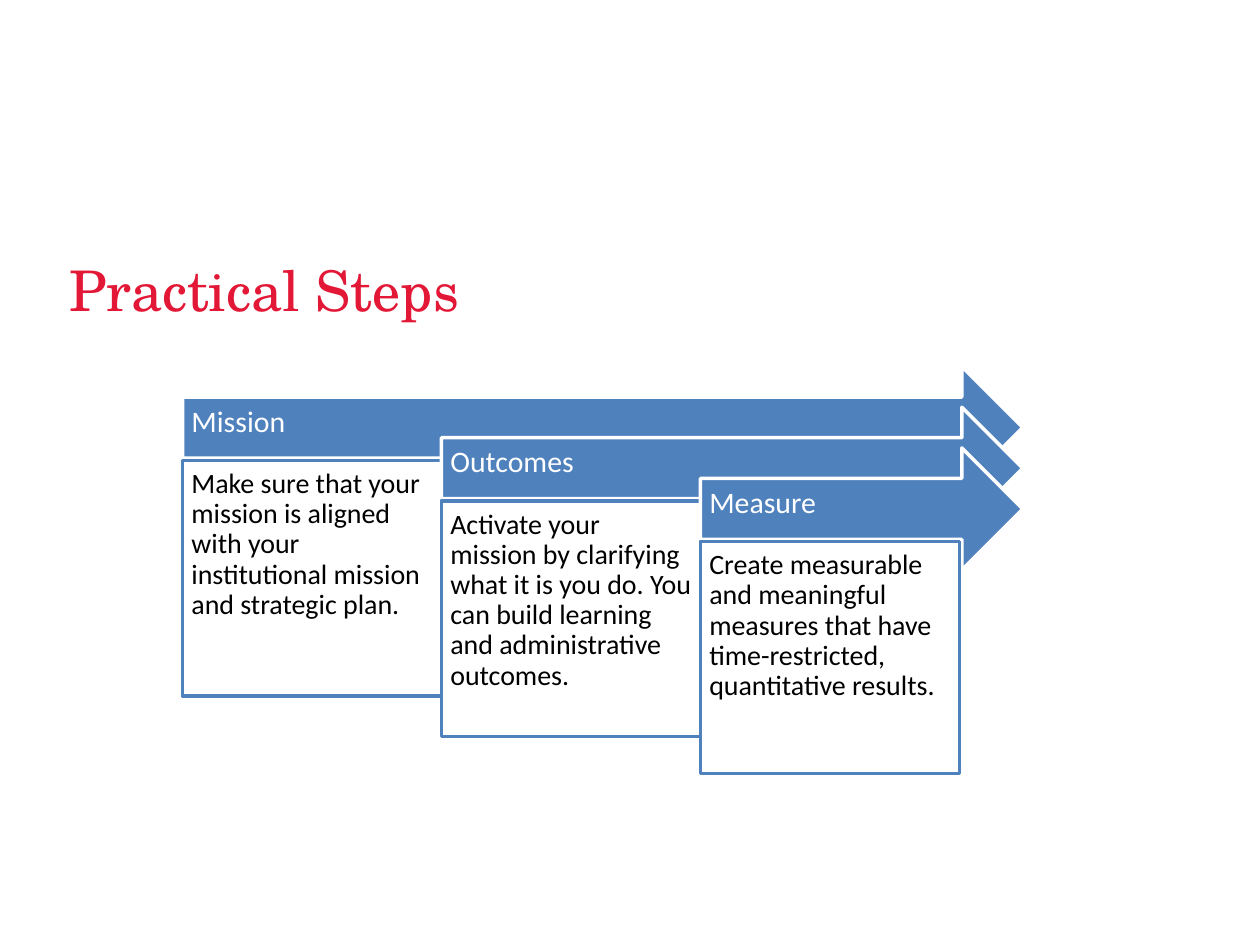
from dataclasses import dataclass

from pptx import Presentation
from pptx.dml.color import RGBColor
from pptx.enum.shapes import MSO_SHAPE
from pptx.enum.text import MSO_ANCHOR, MSO_AUTO_SIZE, PP_ALIGN
from pptx.shapes.autoshape import Shape
from pptx.slide import Slide
from pptx.util import Cm, Pt

ARROW = MSO_SHAPE.RIGHT_ARROW
RECTANGLE = MSO_SHAPE.RECTANGLE
TOP = MSO_ANCHOR.TOP
MIDDLE = MSO_ANCHOR.MIDDLE
BOTTOM = MSO_ANCHOR.BOTTOM
LEFT = PP_ALIGN.LEFT
NO_AUTOFIT = MSO_AUTO_SIZE.NONE

RED = RGBColor(0xE3, 0x18, 0x37)
BLUE = RGBColor(0x4F, 0x81, 0xBD)
WHITE = RGBColor(0xFF, 0xFF, 0xFF)
BLACK = RGBColor(0x00, 0x00, 0x00)

FIRST_LEFT, FIRST_TOP = 3.68, 7.39
COLUMN_WIDTH = 5.22
STEP_DROP = 0.82
ARROW_TIP, ARROW_HEIGHT = 20.62, 2.46
BOX_OFFSET = 1.89
INSET = 0.18


@dataclass(frozen=True)
class Step:
    heading: str
    detail: str
    box_height: float


@dataclass(frozen=True)
class Style:
    fill: RGBColor
    line: RGBColor
    font: RGBColor
    size: float
    anchor: MSO_ANCHOR
    right_inset: float
    bottom_inset: float


ARROW_STYLE = Style(BLUE, WHITE, WHITE, 17, MIDDLE, 0.71, 0.38)
BOX_STYLE = Style(WHITE, BLUE, BLACK, 16, TOP, INSET, INSET)

STEPS = [
    Step(
        "Mission",
        "Make sure that your mission is aligned with your institutional mission "
        "and strategic plan.",
        4.75,
    ),
    Step(
        "Outcomes",
        "Activate your mission by clarifying what it is you do. You can build "
        "learning and administrative outcomes.",
        4.75,
    ),
    Step(
        "Measure",
        "Create measurable and meaningful measures that have time-restricted, "
        "quantitative results.",
        4.67,
    ),
]


def add_title(slide: Slide, text: str) -> None:
    title = slide.shapes.title
    title.left, title.top = Cm(1.14), Cm(4.57)
    title.width, title.height = Cm(22.86), Cm(2.06)
    frame = title.text_frame
    frame.text = text
    frame.auto_size = NO_AUTOFIT
    frame.vertical_anchor = BOTTOM
    paragraph = frame.paragraphs[0]
    paragraph.alignment = LEFT
    paragraph.font.name = "TeX Gyre Schola"
    paragraph.font.size = Pt(32)
    paragraph.font.color.rgb = RED


def format_shape(shape: Shape, text: str, style: Style) -> None:
    shape.shadow.inherit = False
    shape.fill.solid()
    shape.fill.fore_color.rgb = style.fill
    shape.line.color.rgb = style.line
    shape.line.width = Pt(2)
    frame = shape.text_frame
    frame.word_wrap = True
    frame.vertical_anchor = style.anchor
    frame.margin_left = frame.margin_top = Cm(INSET)
    frame.margin_right = Cm(style.right_inset)
    frame.margin_bottom = Cm(style.bottom_inset)
    frame.text = text
    paragraph = frame.paragraphs[0]
    paragraph.alignment = LEFT
    paragraph.line_spacing = 0.9
    paragraph.font.name = "Calibri"
    paragraph.font.size = Pt(style.size)
    paragraph.font.color.rgb = style.font


def add_step(slide: Slide, index: int, step: Step) -> None:
    left = FIRST_LEFT + index * COLUMN_WIDTH
    top = FIRST_TOP + index * STEP_DROP
    arrow = slide.shapes.add_shape(
        ARROW, Cm(left), Cm(top), Cm(ARROW_TIP - left), Cm(ARROW_HEIGHT)
    )
    format_shape(arrow, step.heading, ARROW_STYLE)
    box = slide.shapes.add_shape(
        RECTANGLE, Cm(left), Cm(top + BOX_OFFSET), Cm(COLUMN_WIDTH), Cm(step.box_height)
    )
    format_shape(box, step.detail, BOX_STYLE)


def main() -> None:
    presentation = Presentation()
    presentation.slide_width = Cm(25.4)
    presentation.slide_height = Cm(19.05)
    slide = presentation.slides.add_slide(presentation.slide_layouts[5])
    add_title(slide, "Practical Steps")
    for index, step in enumerate(STEPS):
        add_step(slide, index, step)
    presentation.save("out.pptx")


if __name__ == "__main__":
    main()
